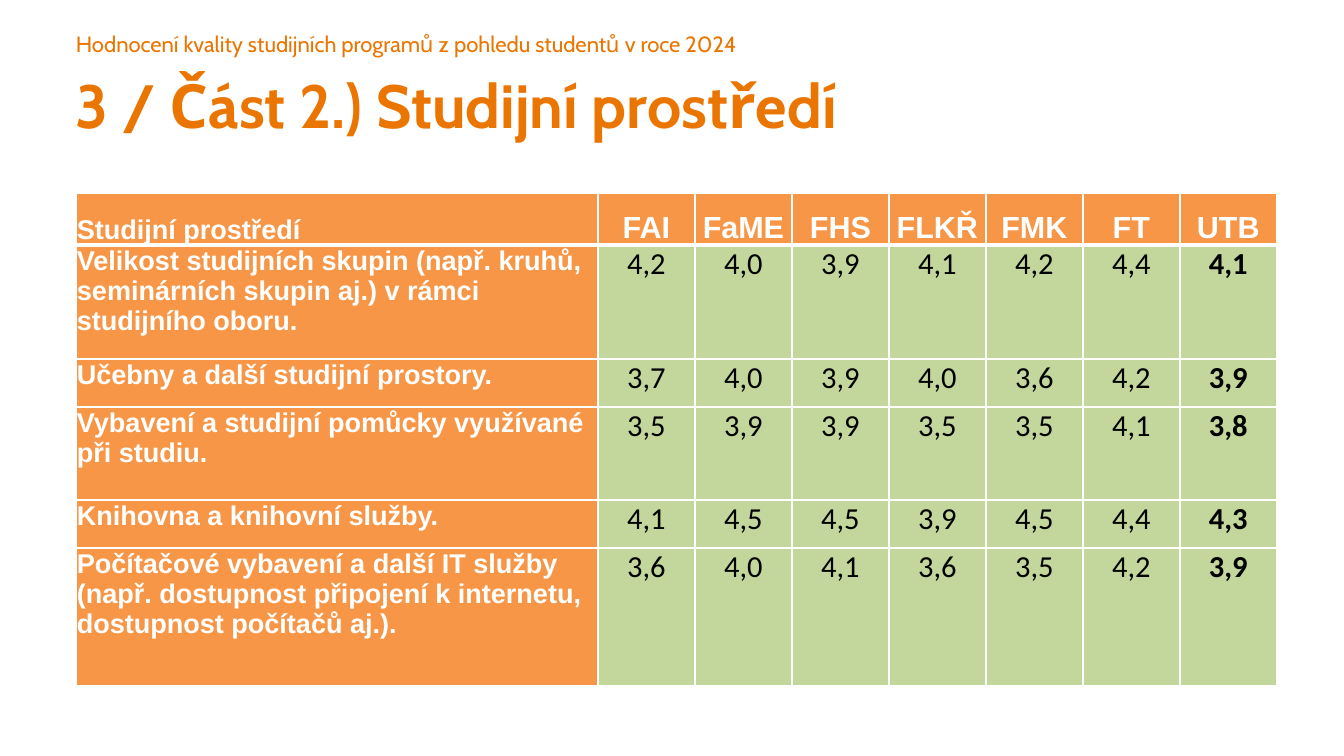
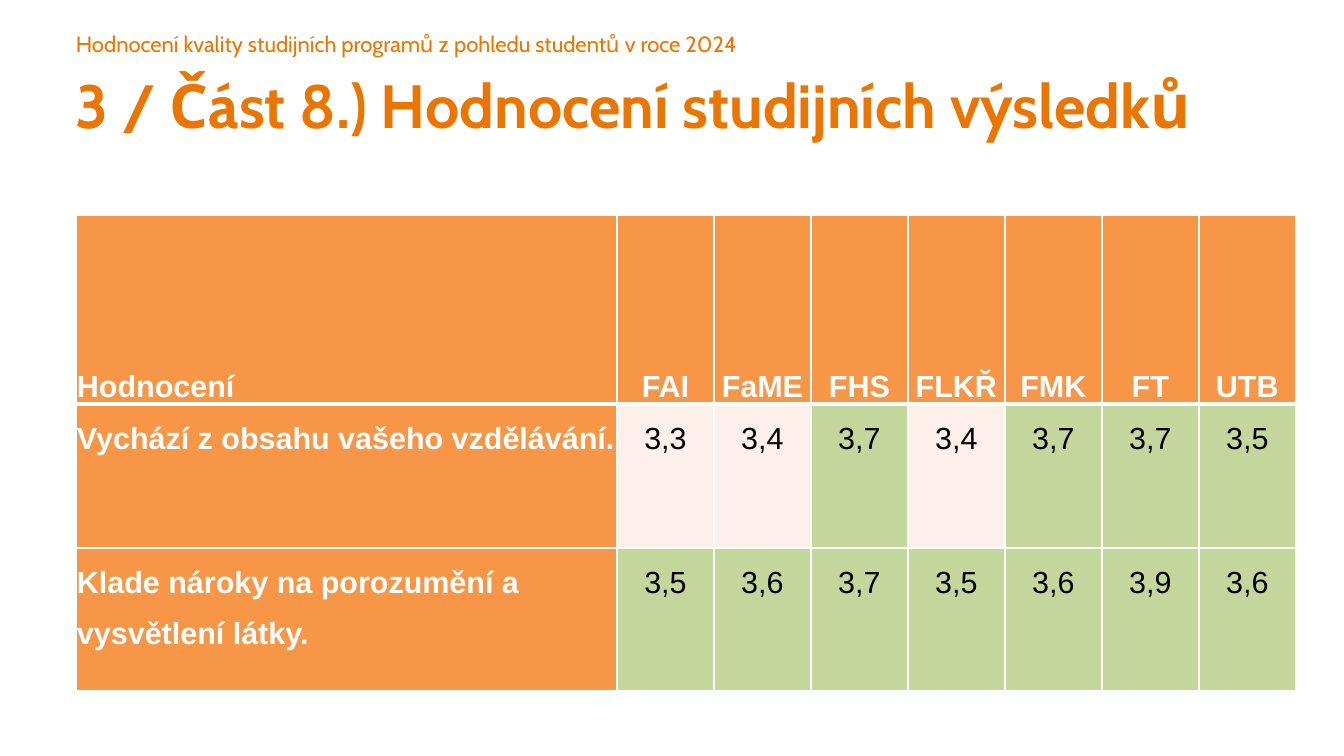
"""Build two survey result slides, each with a title and a table of faculty ratings."""
from dataclasses import dataclass

from lxml import etree
from pptx import Presentation
from pptx import util as u
from pptx.dml.color import RGBColor
from pptx.enum import text
from pptx.oxml import ns

EMU_PER_PX = 7495
SLIDE_WIDTH, SLIDE_HEIGHT = 1344, 756
LEFT = 76
SCORE_WIDTH = 97
TITLE_ORANGE = RGBColor(0xEA, 0x75, 0x00)
TABLE_ORANGE = RGBColor(0xF7, 0x96, 0x46)
GREEN = RGBColor(0xC3, 0xD6, 0x9B)
PINK = RGBColor(0xFD, 0xEF, 0xE9)
WHITE = RGBColor(0xFF, 0xFF, 0xFF)
BLACK = RGBColor(0x00, 0x00, 0x00)
SURVEY = "Hodnocení kvality studijních programů z pohledu studentů v roce 2024"
FACULTIES = ("FAI", "FaME", "FHS", "FLKŘ", "FMK", "FT", "UTB")
PASS_SCORE = 3.5


@dataclass(frozen=True)
class TextStyle:
    font: str
    size: int
    color: RGBColor
    bold: bool = False
    align: text.PP_ALIGN = text.PP_ALIGN.LEFT
    spacing: float = 1.0


@dataclass(frozen=True)
class Question:
    wording: str
    scores: str
    height: int


@dataclass(frozen=True)
class RatingSlide:
    title: str
    heading: str
    top: int
    header_height: int
    question_width: int
    question_size: int
    question_spacing: float
    score_font: str
    bold_total: bool
    questions: tuple[Question, ...]


SURVEY_STYLE = TextStyle("Cabin", 13, TITLE_ORANGE)
TITLE_STYLE = TextStyle("Cabin", 36, TITLE_ORANGE, bold=True)
FACULTY_STYLE = TextStyle("Arial", 18, WHITE, True, text.PP_ALIGN.CENTER, 1.5)

RATING_SLIDES = (
    RatingSlide(
        "3 / Část 2.) Studijní prostředí", "Studijní prostředí",
        193, 52, 522, 16, 1.0, "Calibri", True,
        (
            Question("Velikost studijních skupin (např. kruhů, seminárních skupin aj.) "
                     "v rámci studijního oboru.", "4,2 4,0 3,9 4,1 4,2 4,4 4,1", 114),
            Question("Učebny a další studijní prostory.",
                     "3,7 4,0 3,9 4,0 3,6 4,2 3,9", 48),
            Question("Vybavení a studijní pomůcky využívané při studiu.",
                     "3,5 3,9 3,9 3,5 3,5 4,1 3,8", 93),
            Question("Knihovna a knihovní služby.",
                     "4,1 4,5 4,5 3,9 4,5 4,4 4,3", 48),
            Question("Počítačové vybavení a další IT služby (např. dostupnost připojení "
                     "k internetu, dostupnost počítačů aj.).",
                     "3,6 4,0 4,1 3,6 3,5 4,2 3,9", 138),
        ),
    ),
    RatingSlide(
        "3 / Část 8.) Hodnocení studijních výsledků", "Hodnocení",
        215, 189, 541, 18, 1.5, "Arial", False,
        (
            Question("Vychází z obsahu vašeho vzdělávání.",
                     "3,3 3,4 3,7 3,4 3,7 3,7 3,5", 144),
            Question("Klade nároky na porozumění a vysvětlení látky.",
                     "3,5 3,6 3,7 3,5 3,6 3,9 3,6", 143),
        ),
    ),
)


def px(length: int) -> u.Emu:
    """Turn pixels into EMU."""
    return u.Emu(length * EMU_PER_PX)


def write(frame, wording: str, style: TextStyle) -> None:
    """Write one styled paragraph into a text frame."""
    paragraph = frame.paragraphs[0]
    paragraph.alignment = style.align
    paragraph.line_spacing = style.spacing
    run = paragraph.add_run()
    run.text = wording
    run.font.name = style.font
    run.font.size = u.Pt(style.size)
    run.font.bold = style.bold
    run.font.color.rgb = style.color


def fill_heading(shape, top: int, width: int, height: int, wording: str,
                 style: TextStyle) -> None:
    """Place a heading shape without insets and write its text."""
    shape.left, shape.top, shape.width, shape.height = map(px, (LEFT, top, width, height))
    frame = shape.text_frame
    frame.margin_left = frame.margin_top = frame.margin_right = frame.margin_bottom = 0
    frame.word_wrap = True
    frame.auto_size = text.MSO_AUTO_SIZE.NONE
    frame.vertical_anchor = text.MSO_ANCHOR.TOP
    write(frame, wording, style)


def add_borders(cell, top: int, bottom: int) -> None:
    """Give a cell white borders, one point wide at the sides."""
    properties = cell._tc.get_or_add_tcPr()
    for tag, points in (("a:lnL", 1), ("a:lnR", 1), ("a:lnT", top), ("a:lnB", bottom)):
        line = etree.SubElement(properties, ns.qn(tag), w=str(u.Pt(points)))
        solid = etree.SubElement(line, ns.qn("a:solidFill"))
        etree.SubElement(solid, ns.qn("a:srgbClr"), val=str(WHITE))


def fill_cell(cell, wording: str, style: TextStyle, color: RGBColor, row: int,
              side_margin: int = 1, top_margin: int = 1) -> None:
    """Format one table cell and write its text."""
    add_borders(cell, top=3 if row == 1 else 1, bottom=3 if row == 0 else 1)
    cell.fill.solid()
    cell.fill.fore_color.rgb = color
    cell.margin_left = cell.margin_right = px(side_margin)
    cell.margin_top = px(top_margin)
    cell.margin_bottom = 0
    cell.vertical_anchor = text.MSO_ANCHOR.BOTTOM if row == 0 else text.MSO_ANCHOR.TOP
    write(cell.text_frame, wording, style)


def add_ratings(slide, content: RatingSlide) -> None:
    """Add the table of questions by faculty."""
    widths = [content.question_width] + [SCORE_WIDTH] * len(FACULTIES)
    heights = [content.header_height] + [question.height for question in content.questions]
    table = slide.shapes.add_table(
        len(heights), len(widths), px(LEFT), px(content.top),
        px(sum(widths)), px(sum(heights))).table
    table.horz_banding = False
    for column, width in zip(table.columns, widths):
        column.width = px(width)
    for table_row, height in zip(table.rows, heights):
        table_row.height = px(height)

    question_style = TextStyle("Arial", content.question_size, WHITE, True,
                               spacing=content.question_spacing)
    fill_cell(table.cell(0, 0), content.heading, question_style, TABLE_ORANGE, 0)
    for column, faculty in enumerate(FACULTIES, 1):
        fill_cell(table.cell(0, column), faculty, FACULTY_STYLE, TABLE_ORANGE, 0, 6, 0)
    for row, question in enumerate(content.questions, 1):
        fill_cell(table.cell(row, 0), question.wording, question_style, TABLE_ORANGE, row)
        for column, score in enumerate(question.scores.split(), 1):
            is_total = column == len(FACULTIES)
            style = TextStyle(content.score_font, 18, BLACK, content.bold_total and is_total,
                              text.PP_ALIGN.CENTER, content.question_spacing)
            passed = float(score.replace(",", ".")) >= PASS_SCORE
            fill_cell(table.cell(row, column), score, style, GREEN if passed else PINK, row)


def add_rating_slide(presentation, content: RatingSlide) -> None:
    """Add a slide with the survey name, the title and the ratings."""
    slide = presentation.slides.add_slide(presentation.slide_layouts[5])
    survey = slide.shapes.add_textbox(0, 0, 0, 0)
    fill_heading(survey, 31, 1210, 27, SURVEY, SURVEY_STYLE)
    fill_heading(slide.shapes.title, 67, 1242, 74, content.title, TITLE_STYLE)
    add_ratings(slide, content)


def main() -> None:
    """Build and save the presentation."""
    presentation = Presentation()
    presentation.slide_width = px(SLIDE_WIDTH)
    presentation.slide_height = px(SLIDE_HEIGHT)
    for content in RATING_SLIDES:
        add_rating_slide(presentation, content)
    presentation.save("out.pptx")


if __name__ == "__main__":
    main()
